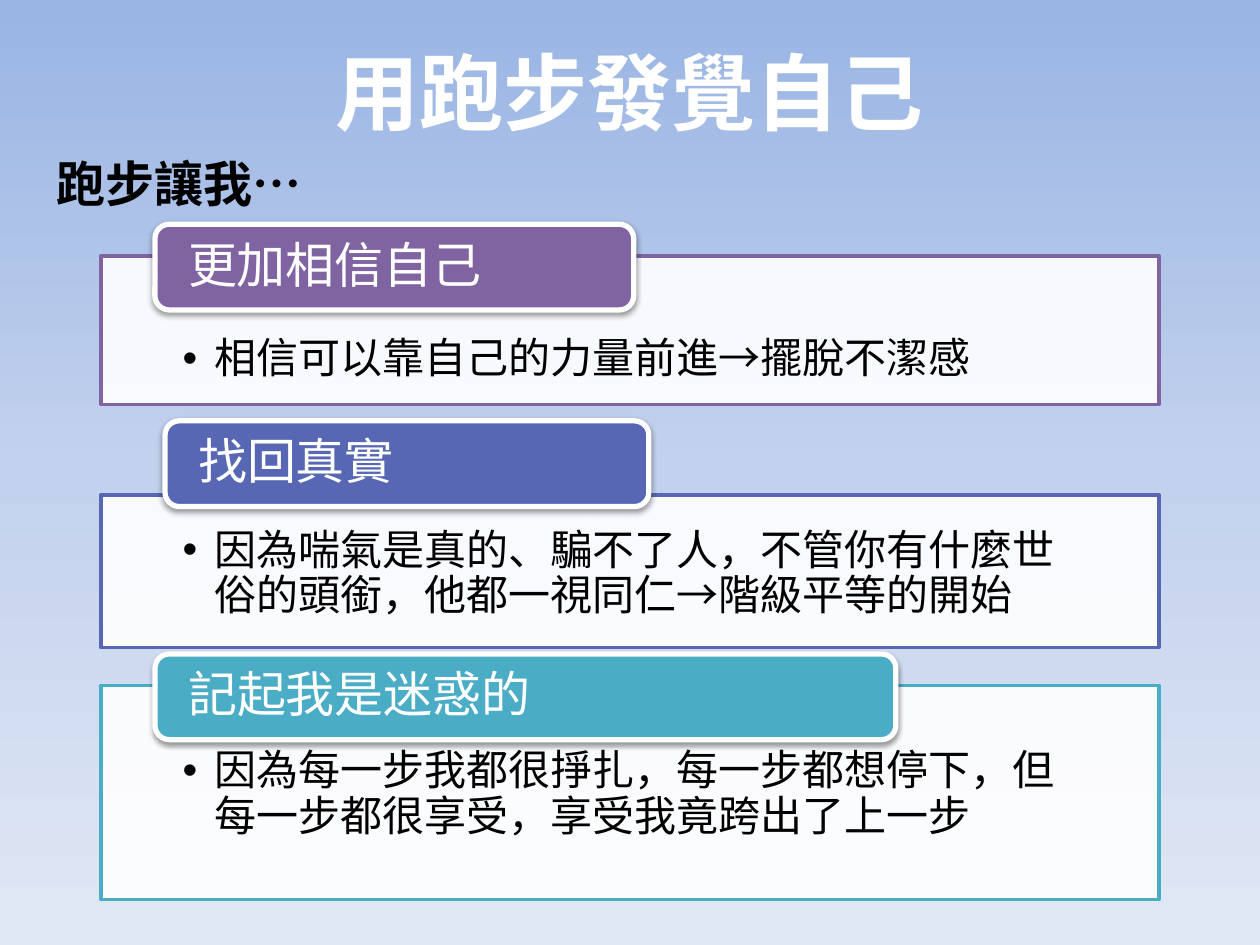
from copy import deepcopy
from dataclasses import dataclass

from lxml import etree
from pptx import Presentation
from pptx.dml.color import RGBColor
from pptx.enum.shapes import MSO_SHAPE
from pptx.enum.text import MSO_ANCHOR, MSO_AUTO_SIZE, PP_ALIGN
from pptx.oxml.ns import qn
from pptx.util import Inches, Pt

RECTANGLE, ROUNDED = MSO_SHAPE.RECTANGLE, MSO_SHAPE.ROUNDED_RECTANGLE
TOP, MIDDLE = MSO_ANCHOR.TOP, MSO_ANCHOR.MIDDLE
LEFT, CENTER = PP_ALIGN.LEFT, PP_ALIGN.CENTER
NO_AUTOFIT = MSO_AUTO_SIZE.NONE
COLUMNS, ROWS = 100, 75
UNIT = Inches(0.1)


@dataclass(frozen=True)
class Theme:
    """Colours, font and type sizes of the slide."""
    font: str = "Noto Sans CJK SC"
    white: str = "FFFFFF"
    black: str = "000000"
    purple: str = "8064A2"
    indigo: str = "5767B4"
    teal: str = "4BACC6"
    sky: tuple = ((0, "9AB5E4"), (0.5, "C2D1ED"), (1, "E1E8F5"))
    title_size: int = 48
    heading_size: int = 28
    detail_size: int = 24


THEME = Theme()


@dataclass(frozen=True)
class Box:
    """A region in grid columns and rows."""
    left: float
    top: float
    width: float
    height: float

    def inner(self, left, top, width, height):
        """Return a box placed relative to this one."""
        return Box(self.left + left, self.top + top, width, height)

    def lengths(self):
        """Return the region as slide lengths."""
        return [round(n * UNIT) for n in (self.left, self.top, self.width, self.height)]


def paint_background(slide):
    """Fill the slide with the vertical sky gradient."""
    fill = slide.background.fill
    fill.gradient()
    fill.gradient_angle = 270
    stop_list = slide.element.find(".//" + qn("a:gsLst"))
    stop_list.insert(1, deepcopy(stop_list[0]))
    for stop, (position, color) in zip(fill.gradient_stops, THEME.sky):
        stop.position = position
        stop.color.rgb = RGBColor.from_string(color)


def write(shape, text, size, color, bold=False, align=LEFT, anchor=MIDDLE):
    """Put one formatted paragraph in a shape and return it."""
    frame = shape.text_frame
    frame.text = text
    frame.word_wrap = True
    frame.auto_size = NO_AUTOFIT
    frame.vertical_anchor = anchor
    paragraph = frame.paragraphs[0]
    paragraph.alignment = align
    font = paragraph.runs[0].font
    font.name, font.size, font.bold = THEME.font, Pt(size), bold
    font.color.rgb = RGBColor.from_string(color)
    properties = paragraph.runs[0]._r.get_or_add_rPr()
    etree.SubElement(properties, qn("a:ea"), typeface=THEME.font)
    return paragraph


def set_bullet(paragraph, character=None):
    """Give a paragraph a hanging bullet, or none."""
    properties = paragraph._p.get_or_add_pPr()
    hang = Inches(0.25) if character else 0
    properties.set("marL", str(hang))
    properties.set("indent", str(-hang))
    if character:
        etree.SubElement(properties, qn("a:buFont"), typeface="Arial")
        etree.SubElement(properties, qn("a:buChar"), char=character)
    else:
        etree.SubElement(properties, qn("a:buNone"))


def set_insets(shape, side, top, bottom):
    """Set the text margins in grid units."""
    frame = shape.text_frame
    frame.margin_left = frame.margin_right = round(side * UNIT)
    frame.margin_top, frame.margin_bottom = round(top * UNIT), round(bottom * UNIT)


def add_block(slide, kind, box, fill, line, line_width):
    """Add a filled, outlined shape without a shadow."""
    block = slide.shapes.add_shape(kind, *box.lengths())
    block.shadow.inherit = False
    block.fill.solid()
    block.fill.fore_color.rgb = RGBColor.from_string(fill)
    block.line.color.rgb = RGBColor.from_string(line)
    block.line.width = Pt(line_width)
    return block


def add_soft_shadow(shape):
    """Drop a soft black shadow below a shape."""
    effects = shape._element.spPr.find(qn("a:effectLst"))
    shadow = etree.SubElement(
        effects, qn("a:outerShdw"), blurRad=str(Pt(3.1)), dist=str(Pt(1.6)),
        dir="5400000", rotWithShape="0")
    color = etree.SubElement(shadow, qn("a:srgbClr"), val=THEME.black)
    etree.SubElement(color, qn("a:alpha"), val="38000")


def add_reason(slide, box, color, heading, detail, tab_left, tab_width, text_top):
    """Add a translucent panel with a bulleted detail and a heading tab."""
    panel = add_block(slide, RECTANGLE, box, THEME.white, color, 2)
    panel_color = panel._element.spPr.find(qn("a:solidFill"))[0]
    etree.SubElement(panel_color, qn("a:alpha"), val="90000")
    set_insets(panel, 6.5, text_top, 1.6)
    point = write(panel, detail, THEME.detail_size, THEME.black, anchor=TOP)
    point.line_spacing = 0.9
    set_bullet(point, "•")

    tab_rise = 5.9 if heading == "找回真實" else 2.5
    tab_box = box.inner(tab_left, -tab_rise, tab_width, 6.8)
    tab = add_block(slide, ROUNDED, tab_box, color, THEME.white, 3)
    add_soft_shadow(tab)
    set_insets(tab, 2.3, 0, 0)
    write(tab, heading, THEME.heading_size, THEME.white).line_spacing = 0.9


def place_heading(slide, title_box, lead_box):
    """Fill the title and the lead-in placeholders."""
    title, lead = slide.shapes.title, slide.placeholders[1]
    for holder, box in ((title, title_box), (lead, lead_box)):
        holder.left, holder.top, holder.width, holder.height = box.lengths()
    write(title, "用跑步發覺自己", THEME.title_size, THEME.white, True, CENTER)
    set_bullet(write(lead, "跑步讓我…", THEME.heading_size, THEME.black, True, anchor=TOP))


def place_reasons(slide, box):
    """Stack the three reasons inside the box."""
    reasons = (
        (0, 11.8, THEME.purple, "更加相信自己",
         "相信可以靠自己的力量前進→擺脫不潔感", 4.3, 38, 6.5),
        (19, 12.1, THEME.indigo, "找回真實",
         "因為喘氣是真的、騙不了人，不管你有什麼世俗的頭銜，他都一視同仁→階級平等的開始",
         5.1, 38.4, 2.7),
        (34.1, 17, THEME.teal, "記起我是迷惑的",
         "因為每一步我都很掙扎，每一步都想停下，但每一步都很享受，享受我竟跨出了上一步",
         4.3, 58.8, 5.1),
    )
    for top, height, *content in reasons:
        add_reason(slide, box.inner(0, top, box.width, height), *content)


def main():
    """Build and save the slide."""
    deck = Presentation()
    deck.slide_width, deck.slide_height = COLUMNS * UNIT, ROWS * UNIT
    slide = deck.slides.add_slide(deck.slide_layouts[1])
    paint_background(slide)
    place_heading(slide, Box(5, 2.9, 90, 8.7), Box(3.5, 11.7, 91.5, 53.9))
    place_reasons(slide, Box(8, 20.3, 84, 51.1))
    deck.save("out.pptx")


if __name__ == "__main__":
    main()
